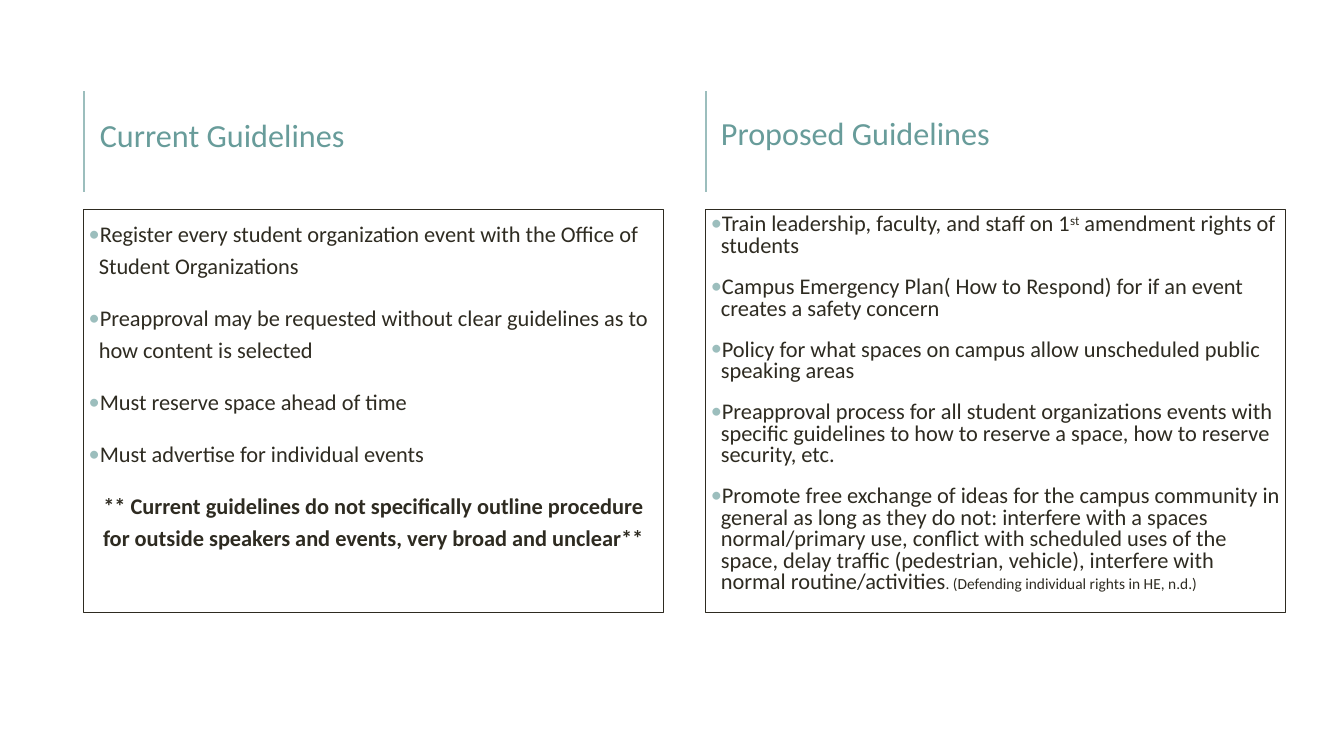
"""Build the slide comparing current and proposed speaker guidelines."""
from lxml import etree
from pptx import Presentation
from pptx.dml.color import RGBColor as RGB
from pptx.enum.text import MSO_ANCHOR, MSO_AUTO_SIZE, PP_ALIGN
from pptx.oxml.ns import qn
from pptx.util import Inches, Pt

COLORS = {"ink": "2E2B21", "heading": "689C9A", "accent": "9CBEBD"}
CURRENT = [
    "Register every student organization event with the Office of Student Organizations",
    "Preapproval may be requested without clear guidelines as to how content is selected",
    "Must reserve space ahead of time",
    "Must advertise for individual events",
]
WARNING = ("** Current guidelines do not specifically outline procedure for outside "
           "speakers and events, very broad and unclear**")
PROPOSED = [
    "Train leadership, faculty, and staff on 1|st| amendment rights of students",
    "Campus Emergency Plan( How to Respond) for if an event creates a safety concern",
    "Policy for what spaces on campus allow unscheduled public speaking areas",
    "Preapproval process for all student organizations events with specific guidelines "
    "to how to reserve a space, how to reserve security, etc.",
    "Promote free exchange of ideas for the campus community in general as long as they "
    "do not: interfere with a spaces normal/primary use, conflict with scheduled uses of "
    "the space, delay traffic (pedestrian, vehicle), interfere with normal "
    "routine/activities|. (Defending individual rights in HE, n.d.)",
]
COLUMNS = [
    ("Current Guidelines", 0.83, 0.84, 0.91, 1.2, CURRENT + [WARNING]),
    ("Proposed Guidelines", 7, 7, 0.89, 0.8, PROPOSED),
]


def add_run(p, text, size, color, bold=False):
    r = p.add_run()
    r.text = text
    r.font.name = "Calibri"
    r.font.size = Pt(size)
    r.font.bold = bold
    r.font.color.rgb = RGB.from_string(COLORS[color])
    return r


def set_frame(sp, box, insets, anchor):
    sp.left, sp.top, sp.width, sp.height = map(Inches, box)
    tf = sp.text_frame
    tf.word_wrap = True
    tf.auto_size = MSO_AUTO_SIZE.NONE
    tf.vertical_anchor = anchor
    tf.margin_left = tf.margin_right = Inches(insets[0])
    tf.margin_top = tf.margin_bottom = Inches(insets[1])
    return tf


prs = Presentation()
prs.slide_width, prs.slide_height = Inches(13.33), Inches(7.5)
s = prs.slides.add_slide(prs.slide_layouts.get_by_name("Comparison"))
title = s.shapes.title.element
title.getparent().remove(title)

for col, (heading, left, head_left, head_top, spacing, items) in enumerate(COLUMNS):
    rule = s.shapes.add_connector(1, Inches(left), Inches(1.9), Inches(left), Inches(0.9))
    rule.line.color.rgb = RGB.from_string(COLORS["accent"])
    rule.line.width = Pt(1.5)
    etree.SubElement(rule.element.spPr, qn("a:effectLst"))

    tf = set_frame(s.placeholders[1 + 2 * col], (head_left, head_top, 5.92, 0.9),
                   (0.15, 0.05), MSO_ANCHOR.MIDDLE)
    p = tf.paragraphs[0]
    p.line_spacing = 0.9
    p.space_before = Pt(0)
    add_run(p, heading, 23, "heading")

    body = s.placeholders[2 + 2 * col]
    tf = set_frame(body, (left, 2.08, 5.75, 4), (0.05, 0.05), MSO_ANCHOR.TOP)
    body.line.color.rgb = RGB.from_string(COLORS["ink"])
    body.line.width = Pt(0.75)
    for i, item in enumerate(items):
        p = tf.add_paragraph() if i else tf.paragraphs[0]
        p.line_spacing = spacing
        p.space_before = Pt(12 if i else 0)
        p.space_after = Pt(2)
        pPr = p._p.get_or_add_pPr()
        if item == WARNING:
            p.alignment = PP_ALIGN.CENTER
            pPr.set("marL", "0")
            pPr.set("indent", "0")
            etree.SubElement(pPr, qn("a:buNone"))
        else:
            pPr.set("marL", str(Inches(0.1)))
            pPr.set("indent", str(-Inches(0.1)))
            bullet_color = etree.SubElement(pPr, qn("a:buClr"))
            etree.SubElement(bullet_color, qn("a:srgbClr"), val=COLORS["accent"])
            etree.SubElement(pPr, qn("a:buFont"), typeface="Calibri")
            etree.SubElement(pPr, qn("a:buChar"), char="•")
        for text in item.split("|"):
            size = 11 if text.startswith(". (") else 16
            r = add_run(p, text, size, "ink", item == WARNING)
            if text == "st":
                r.font._element.set("baseline", "30000")

prs.save("out.pptx")
